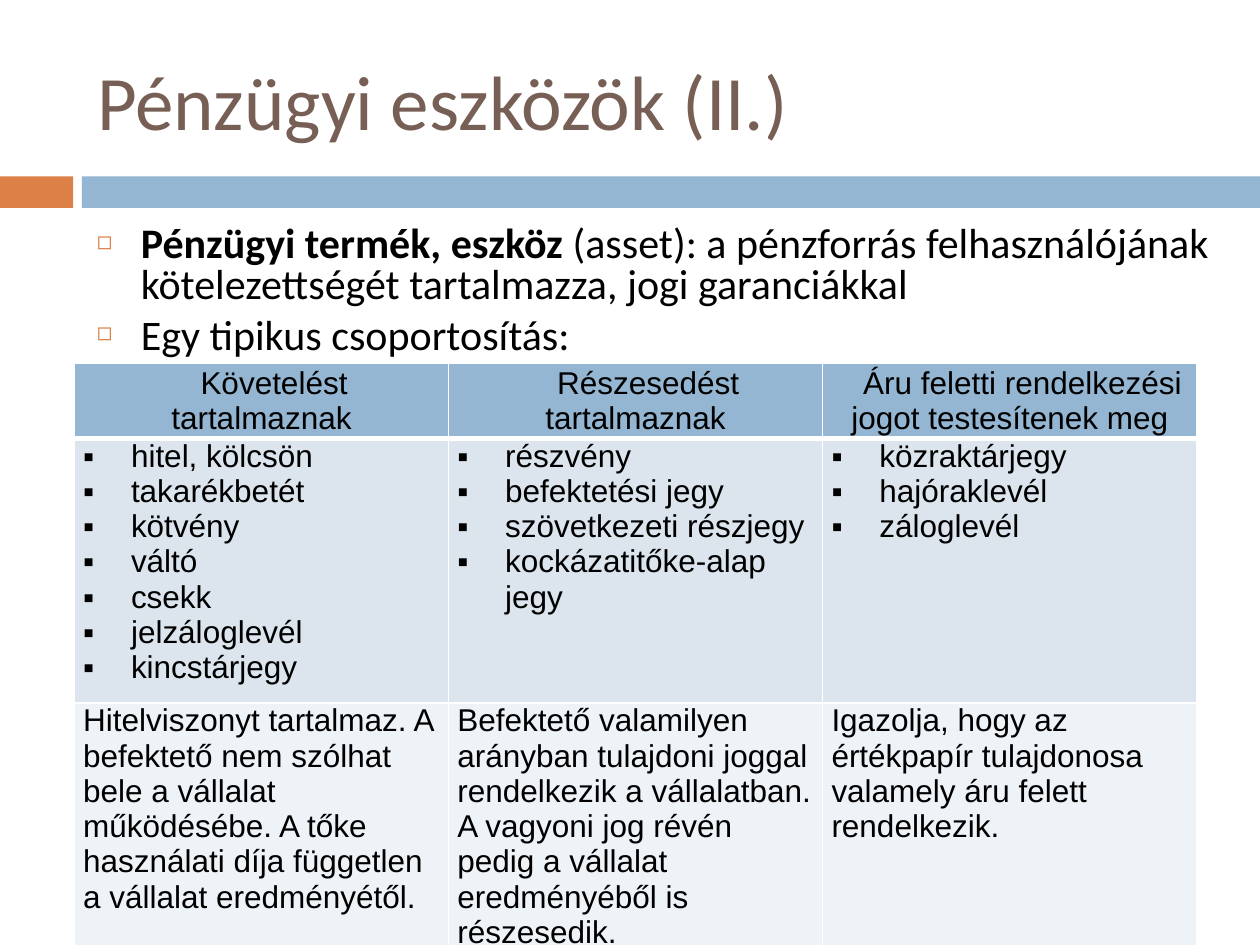
from lxml.etree import SubElement
from pptx import Presentation
from pptx.dml.color import RGBColor
from pptx.enum.shapes import MSO_SHAPE
from pptx.enum.text import MSO_ANCHOR, PP_ALIGN
from pptx.oxml import parse_xml
from pptx.oxml.ns import nsdecls, qn
from pptx.util import Inches, Pt

# Content
TITLE = "Pénzügyi eszközök (II.)"
BODY = [  # (bold lead, rest)
    ("Pénzügyi termék, eszköz ",
     "(asset): a pénzforrás felhasználójának kötelezettségét tartalmazza, jogi garanciákkal"),
    ("", "Egy tipikus csoportosítás:"),
]
HEADERS = ["Követelést tartalmaznak", "Részesedést tartalmaznak",
           "Áru feletti rendelkezési jogot testesítenek meg"]
EXAMPLES = [
    ["hitel, kölcsön", "takarékbetét", "kötvény", "váltó", "csekk",
     "jelzáloglevél", "kincstárjegy"],
    ["részvény", "befektetési jegy", "szövetkezeti részjegy", "kockázatitőke-alap jegy"],
    ["közraktárjegy", "hajóraklevél", "záloglevél"],
]
NOTES = [
    "Hitelviszonyt tartalmaz. A befektető nem szólhat bele a vállalat működésébe. "
    "A tőke használati díja független a vállalat eredményétől.",
    "Befektető valamilyen arányban tulajdoni joggal rendelkezik a vállalatban. "
    "A vagyoni jog révén pedig a vállalat eredményéből is részesedik.",
    "Igazolja, hogy az értékpapír tulajdonosa valamely áru felett rendelkezik.",
]
ROW_HEIGHTS = [0.55, 1.96, 1.96]
COL_WIDTH = 2.97

THEME = {
    "title": "775F55", "text": "000000", "accent": "DD8047", "band": "94B6D2",
    "rows": ["94B6D2", "DCE5EE", "EEF3F7"], "border": "FFFFFF",
    "font": "Calibri", "table_font": "Arial",
    "title_size": 44, "body_size": 24, "table_size": 18,
}


def style(run, font, size, color, bold=False):
    f = run.font
    f.name, f.size, f.bold = font, Pt(size), bold
    f.color.rgb = RGBColor.from_string(color)


def indent(p, left, first):
    pPr = p._p.get_or_add_pPr()
    pPr.set("marL", str(Inches(left)))
    pPr.set("indent", str(Inches(first)))
    return pPr


def bullet(p, char, hang, color=None, percent=None):
    pPr = indent(p, hang, -hang)
    if color:
        SubElement(SubElement(pPr, qn("a:buClr")), qn("a:srgbClr"), val=color)
    if percent:
        SubElement(pPr, qn("a:buSzPct"), val=str(percent * 1000))
    SubElement(pPr, qn("a:buFont"), typeface="Arial")
    SubElement(pPr, qn("a:buChar"), char=char)


def borders(cell, widths):
    """Set left, right, top and bottom lines, in points."""
    tcPr = cell._tc.get_or_add_tcPr()
    for i, (side, width) in enumerate(zip("LRTB", widths)):
        tcPr.insert(i, parse_xml(
            f'<a:ln{side} {nsdecls("a")} w="{Pt(width)}"><a:solidFill>'
            f'<a:srgbClr val="{THEME["border"]}"/></a:solidFill></a:ln{side}>'))


prs = Presentation()
prs.slide_width, prs.slide_height = Inches(10), Inches(7.5)
s = prs.slides.add_slide(prs.slide_layouts[5])

# Band under the title
for left, width, color in [(0, 0.58, THEME["accent"]), (0.65, 9.35, THEME["band"])]:
    sp = s.shapes.add_shape(MSO_SHAPE.RECTANGLE, Inches(left), Inches(1.4),
                            Inches(width), Inches(0.25))
    sp.shadow.inherit = False
    sp.fill.solid()
    sp.fill.fore_color.rgb = RGBColor.from_string(color)
    sp.line.fill.background()

# Title
title = s.shapes.title
title.left, title.top, title.width, title.height = map(Inches, (0.67, 0.25, 8.92, 1.08))
tf = title.text_frame
tf.text = TITLE
tf.vertical_anchor = MSO_ANCHOR.MIDDLE
tf.paragraphs[0].alignment = PP_ALIGN.LEFT
style(tf.paragraphs[0].runs[0], THEME["font"], THEME["title_size"], THEME["title"])

# Body text
tf = s.shapes.add_textbox(*map(Inches, (0.67, 1.75, 9.13, 4.92))).text_frame
tf.word_wrap = True
for i, parts in enumerate(BODY):
    p = tf.add_paragraph() if i else tf.paragraphs[0]
    p.line_spacing, p.space_after = 0.8, Pt(6)
    bullet(p, "◻", 0.35, THEME["accent"], 60)
    for text, bold in zip(parts, (True, False)):
        if text:
            r = p.add_run()
            r.text = text
            style(r, THEME["font"], THEME["body_size"], THEME["text"], bold)

# Table: headers, bulleted examples, notes
rows = [[[h] for h in HEADERS], EXAMPLES, [[n] for n in NOTES]]
table = s.shapes.add_table(len(rows), len(HEADERS), Inches(0.59), Inches(2.88),
                           Inches(COL_WIDTH * len(HEADERS)),
                           Inches(sum(ROW_HEIGHTS))).table
for col in table.columns:
    col.width = Inches(COL_WIDTH)
for y, cells in enumerate(rows):
    table.rows[y].height = Inches(ROW_HEIGHTS[y])
    for x, lines in enumerate(cells):
        cell = table.cell(y, x)
        cell.margin_left = cell.margin_right = Inches(0.07)
        cell.margin_top = cell.margin_bottom = 0
        cell.vertical_anchor = MSO_ANCHOR.TOP if y else MSO_ANCHOR.MIDDLE
        cell.fill.solid()
        cell.fill.fore_color.rgb = RGBColor.from_string(THEME["rows"][y])
        borders(cell, (1, 1, 3 if y == 1 else 1, 1 if y else 3))
        cell.text_frame.text = "\n".join(lines)
        for p in cell.text_frame.paragraphs:
            style(p.runs[0], THEME["table_font"], THEME["table_size"], THEME["text"])
            if y == 0:
                p.alignment = PP_ALIGN.CENTER
                indent(p, 0, 0.2)
            elif y == 1:
                bullet(p, "▪", 0.38)

prs.save("out.pptx")
